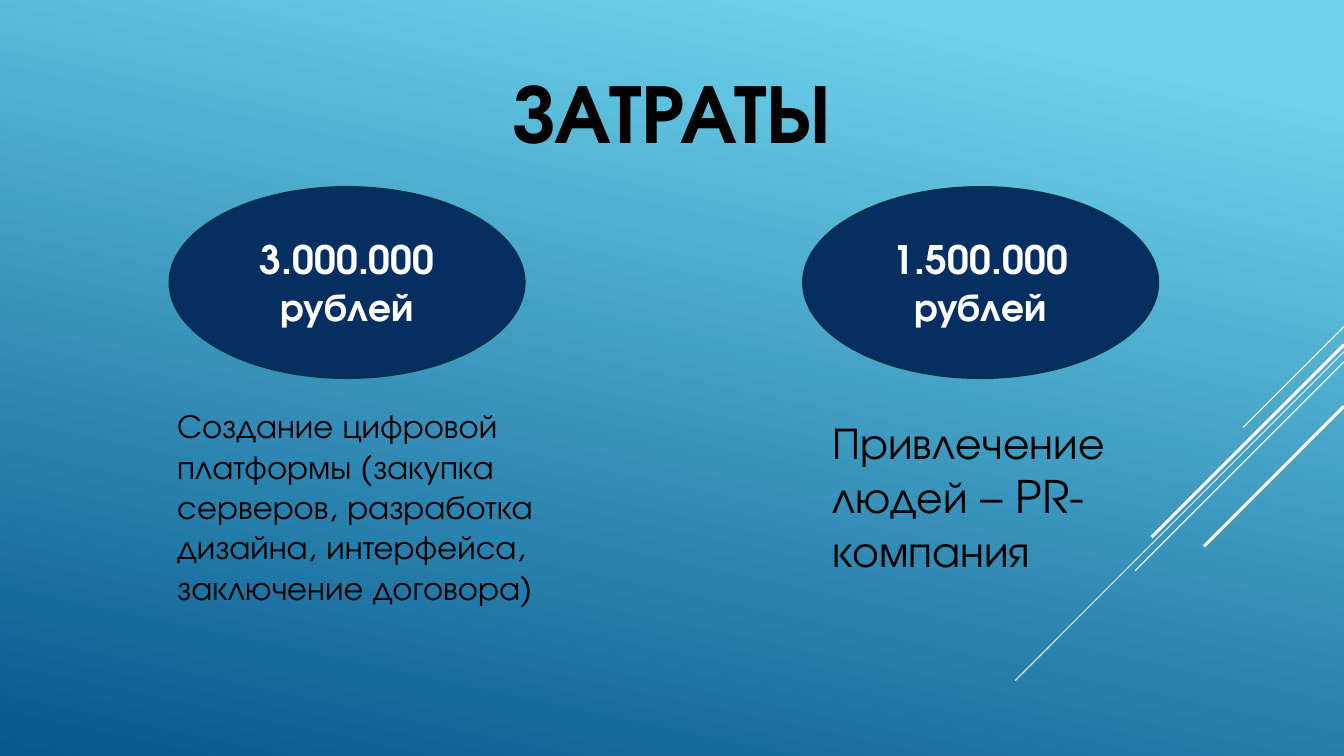
from pptx import Presentation
from pptx.dml.color import RGBColor
from pptx.enum.shapes import MSO_CONNECTOR, MSO_SHAPE
from pptx.enum.text import MSO_ANCHOR, PP_ALIGN
from pptx.oxml.ns import qn
from pptx.util import Pt
from lxml.etree import SubElement


def color(hex_string):
    return RGBColor.from_string(hex_string)


class CostPage:
    font = "TeX Gyre Adventor"
    black, white = "000000", "FFFFFF"
    navy, outline = "052F61", "043148"
    sky, deep_blue = "6ED2EB", "06588E"

    def __init__(self, deck):
        self.page = deck.slides.add_slide(deck.slide_layouts[6])

    def background(self):
        fill = self.page.background.fill
        fill.gradient()
        fill.gradient_angle = 258
        stops = zip(fill.gradient_stops, ((0.1, self.sky), (1, self.deep_blue)))
        for stop, (position, shade) in stops:
            stop.position = position
            stop.color.rgb = color(shade)

    def diagonal(self, right, top, reach, weight):
        """Draw a 45-degree line running down and left."""
        line = self.page.shapes.add_connector(
            MSO_CONNECTOR.STRAIGHT,
            Pt(right), Pt(top), Pt(right - reach), Pt(top + reach))
        line.line.color.rgb = color(self.white)
        line.line.width = Pt(weight)
        SubElement(line._element.spPr, qn("a:effectLst"))

    def set_text(self, shape, text, size, shade, bold, align, anchor):
        frame = shape.text_frame
        frame.word_wrap = True
        frame.vertical_anchor = anchor
        frame.text = text
        para = frame.paragraphs[0]
        para.alignment = align
        span = para.runs[0]
        span.font.name = self.font
        span.font.size = Pt(size)
        span.font.bold = bold
        span.font.color.rgb = color(shade)

    def text(self, left, top, width, height, text, size, bold=False,
             align=PP_ALIGN.LEFT, anchor=MSO_ANCHOR.TOP):
        box = self.page.shapes.add_textbox(
            Pt(left), Pt(top), Pt(width), Pt(height))
        self.set_text(box, text, size, self.black, bold, align, anchor)

    def amount(self, left, top, width, height, text):
        oval = self.page.shapes.add_shape(
            MSO_SHAPE.OVAL, Pt(left), Pt(top), Pt(width), Pt(height))
        oval.shadow.inherit = False
        oval.fill.solid()
        oval.fill.fore_color.rgb = color(self.navy)
        oval.line.color.rgb = color(self.outline)
        oval.line.width = Pt(1.25)
        self.set_text(oval, text, 28, self.white, True,
                      PP_ALIGN.CENTER, MSO_ANCHOR.MIDDLE)


def main():
    deck = Presentation()
    deck.slide_width, deck.slide_height = Pt(960), Pt(540)
    costs = CostPage(deck)
    costs.background()

    # Diagonal lines from the right edge: top, reach, weight
    for top, reach, weight in (
            (233.3, 72, 0.75), (251.3, 234.7, 0.75), (258.5, 149.2, 0.75),
            (246.2, 137.5, 2.25), (290.2, 100, 2.25)):
        costs.diagonal(960, top, reach, weight)

    # Title
    costs.text(144, 0, 672, 118, "ЗАТРАТЫ", 60, bold=True,
               align=PP_ALIGN.CENTER, anchor=MSO_ANCHOR.BOTTOM)

    # Amounts
    for left, text in ((121, "3.000.000 рублей"), (573.6, "1.500.000 рублей")):
        costs.amount(left, 133.5, 253.8, 136.6, text)

    # What each amount pays for
    costs.text(119.5, 286, 325.4, 152.6,
               "Создание цифровой платформы (закупка серверов, разработка "
               "дизайна, интерфейса, заключение договора)", 24)
    costs.text(587.5, 293, 253.4, 123.8,
               "Привлечение людей – PR-компания", 32)

    deck.save("out.pptx")


if __name__ == "__main__":
    main()
